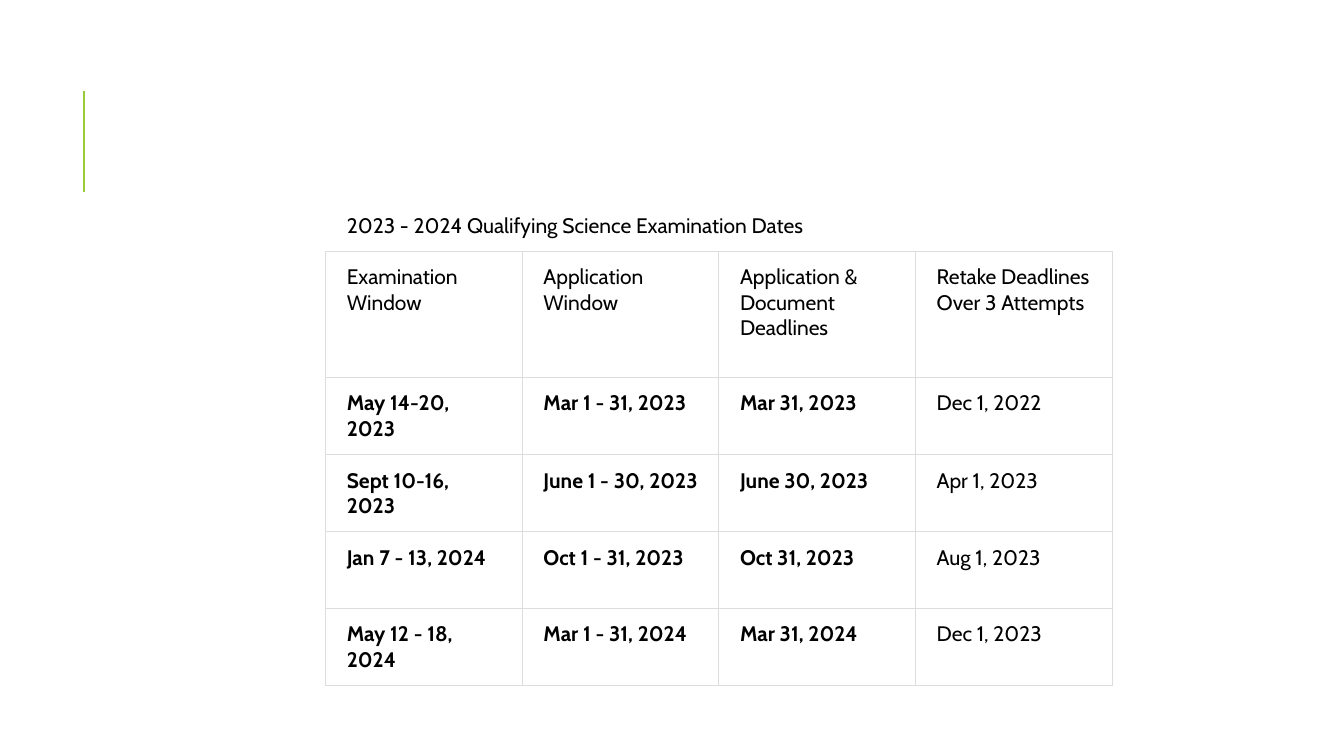
from lxml.etree import SubElement
from pptx import Presentation
from pptx.dml.color import RGBColor
from pptx.enum.shapes import MSO_CONNECTOR
from pptx.enum.text import MSO_ANCHOR
from pptx.oxml.ns import qn
from pptx.util import Pt

EMU_PER_PX = 9144  # 100 px to the inch

TITLE = "2023 - 2024 Qualifying Science Examination Dates"
HEADINGS = ["Examination Window", "Application Window",
            "Application &\vDocument Deadlines",
            "Retake Deadlines\vOver 3 Attempts"]
DATES = [
    ["May 14-20, 2023", "Mar 1 - 31, 2023", "Mar 31, 2023", "Dec 1, 2022"],
    ["Sept 10-16, 2023", "June 1 - 30, 2023", "June 30, 2023", "Apr 1, 2023"],
    ["Jan 7 - 13, 2024", "Oct 1 - 31, 2023", "Oct 31, 2023", "Aug 1, 2023"],
    ["May 12 - 18, 2024", "Mar 1 - 31, 2024", "Mar 31, 2024", "Dec 1, 2023"],
]


def px(n):
    return n * EMU_PER_PX


def rgb(color):
    return RGBColor.from_string(color)


class SlideBuilder:
    font = "Cabin"
    size = 15
    ink = "000000"
    accent = "99CB38"
    grid = "DDDDDD"

    def __init__(self, slide):
        self.s = slide

    def line(self, x1, y1, x2, y2, width):
        ln = self.s.shapes.add_connector(
            MSO_CONNECTOR.STRAIGHT, px(x1), px(y1), px(x2), px(y2))
        ln.line.color.rgb = rgb(self.accent)
        ln.line.width = Pt(width)
        SubElement(ln._element.spPr, qn("a:effectLst"))

    def table(self, x, y, col_width, row_heights, cols):
        """Add a plain table without header or banding style."""
        frame = self.s.shapes.add_table(
            len(row_heights), cols, px(x), px(y),
            px(col_width * cols), px(sum(row_heights)))
        tbl = frame.table
        tbl.first_row = tbl.horz_banding = False
        for col in tbl.columns:
            col.width = px(col_width)
        for row, height in zip(tbl.rows, row_heights):
            row.height = px(height)
        return tbl

    def cell(self, cell, text, bold=False, edges="LRTB", anchor=MSO_ANCHOR.TOP):
        cell.margin_left = cell.margin_right = px(21)
        cell.margin_top = cell.margin_bottom = px(13)
        cell.vertical_anchor = anchor
        self.borders(cell, edges)
        cell.fill.background()
        p = cell.text_frame.paragraphs[0]
        p.text = text
        p.font.name = self.font
        p.font.size = Pt(self.size)
        p.font.bold = bold
        p.font.color.rgb = rgb(self.ink)

    def borders(self, cell, edges):
        """Draw the named edges (of L, R, T, B) and hide the others."""
        tc_pr = cell._tc.get_or_add_tcPr()
        for edge in "LRTB":
            ln = SubElement(tc_pr, qn(f"a:ln{edge}"), w=str(Pt(0.75)))
            if edge in edges:
                fill = SubElement(ln, qn("a:solidFill"))
                SubElement(fill, qn("a:srgbClr"), val=self.grid)
            else:
                SubElement(ln, qn("a:noFill"))


def main():
    prs = Presentation()
    prs.slide_width, prs.slide_height = px(1333), px(750)
    builder = SlideBuilder(prs.slides.add_slide(prs.slide_layouts[6]))

    builder.line(83, 190, 83, 90, 1.5)

    cols = len(HEADINGS)
    heights = [50, 125] + [76] * len(DATES)
    tbl = builder.table(323, 198, 195, heights, cols)
    for c in range(cols):
        builder.cell(tbl.cell(0, c), "" if c else TITLE, edges="B",
                     anchor=MSO_ANCHOR.BOTTOM)
    tbl.cell(0, 0).merge(tbl.cell(0, cols - 1))
    for r, row in enumerate([HEADINGS] + DATES, start=1):
        for c, text in enumerate(row):
            builder.cell(tbl.cell(r, c), text, bold=r > 1 and c < cols - 1)

    prs.save("out.pptx")


if __name__ == "__main__":
    main()
